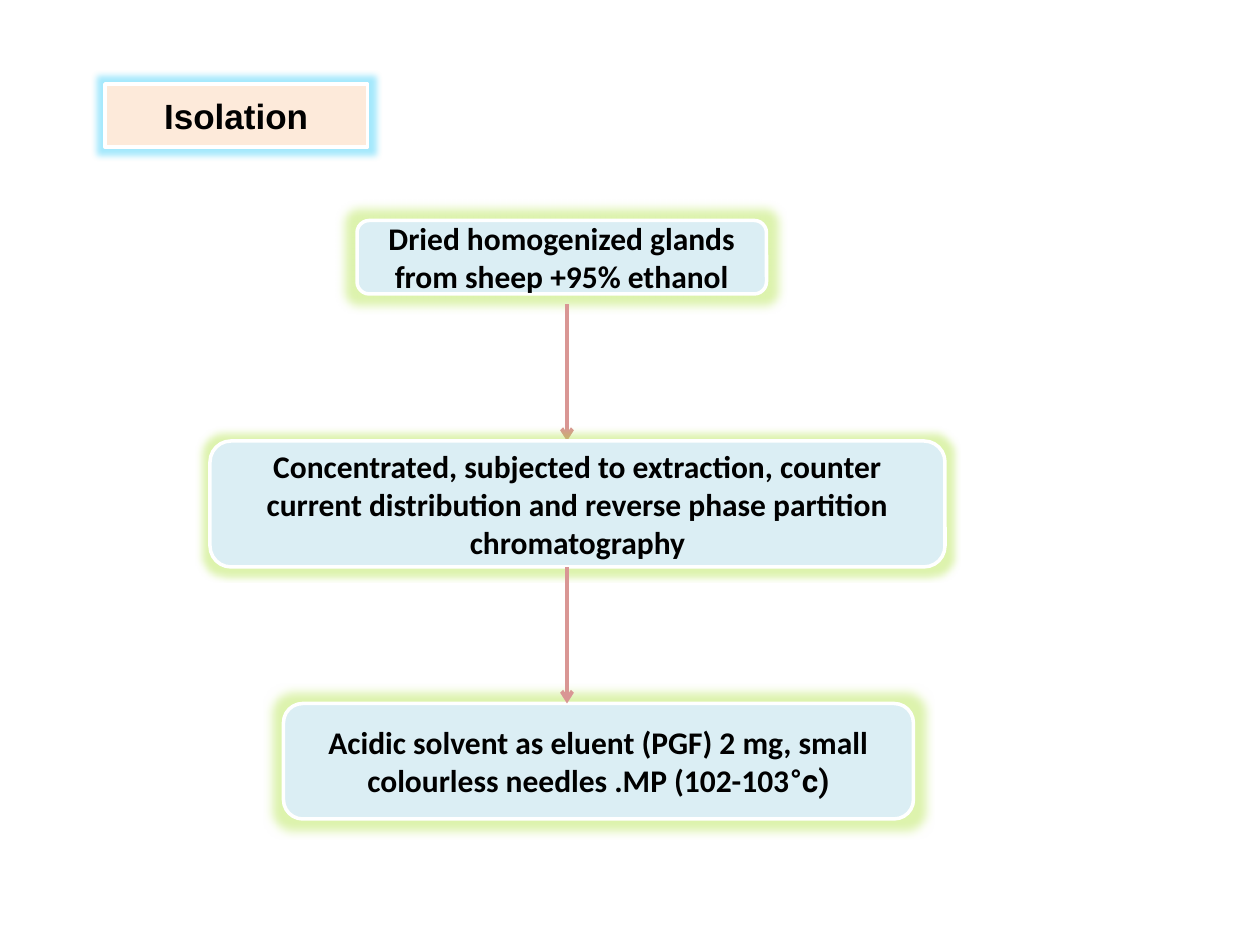
import dataclasses

import lxml.etree
import pptx
import pptx.dml.color
import pptx.enum.dml
import pptx.enum.shapes
import pptx.enum.text
import pptx.oxml
import pptx.oxml.ns
import pptx.util

RGBColor = pptx.dml.color.RGBColor
WHITE = RGBColor(0xFF, 0xFF, 0xFF)
BLACK = RGBColor(0x00, 0x00, 0x00)
PALE_BLUE = RGBColor(0xDB, 0xEE, 0xF4)
PALE_ORANGE = RGBColor(0xFD, 0xEA, 0xDA)
ROSE = RGBColor(0xD9, 0x96, 0x94)
GREEN_GLOW = RGBColor(0xAA, 0xE1, 0x34)
CYAN_GLOW = RGBColor(0x1E, 0xC8, 0xFA)

PX = 7620  # EMU, 120 px to the inch
ARROW_X = 540
GLOW_ALPHA = 40000  # thousandths of a percent


@dataclasses.dataclass(frozen=True)
class Panel:
    left: int
    top: int
    width: int
    height: int
    runs: tuple[tuple[str, str], ...]  # (text, font name)
    glow_pt: int
    glow: RGBColor = GREEN_GLOW
    fill: RGBColor = PALE_BLUE
    text_pt: int = 18


@dataclasses.dataclass(frozen=True)
class Arrow:
    top: int
    bottom: int


HEADING = Panel(100, 80, 250, 60, (("Isolation", "Arial"),), 8,
                CYAN_GLOW, PALE_ORANGE, 20)
FLOW = (
    Panel(340, 210, 390, 70,
          (("Dried homogenized glands from sheep +95% ethanol", "Calibri"),), 11),
    Arrow(290, 420),
    Panel(200, 420, 700, 120,
          (("Concentrated, subjected to extraction, counter current distribution "
            "and reverse phase partition chromatography", "Calibri"),), 8),
    Panel(270, 670, 600, 110,
          (("Acidic solvent as eluent (PGF) 2 mg, small colourless needles "
            ".MP (102-103", "Calibri"), ("°c)", "Roboto")), 11),
    Arrow(540, 670),
)


def set_all(target, values: dict) -> None:
    for name, value in values.items():
        setattr(target, name, value)


def add_part(parent, tag: str, **attributes: str):
    """Append a DrawingML child element and return it."""
    part = lxml.etree.SubElement(parent, pptx.oxml.ns.qn(tag))
    for name, value in attributes.items():
        part.set(name, value)
    return part


def add_glow(shape, radius_pt: int, color: RGBColor) -> None:
    properties = shape.element.spPr
    for effects in properties.findall(pptx.oxml.ns.qn("a:effectLst")):
        properties.remove(effects)
    effects = add_part(properties, "a:effectLst")
    glow = add_part(effects, "a:glow", rad=str(pptx.util.Pt(radius_pt)))
    glow_color = add_part(glow, "a:srgbClr", val=str(color))
    add_part(glow_color, "a:alpha", val=str(GLOW_ALPHA))


def format_panel(shape, panel: Panel) -> None:
    shape.fill.solid()
    shape.fill.fore_color.rgb = panel.fill
    shape.line.color.rgb = WHITE
    shape.line.width = pptx.util.Pt(2)
    add_glow(shape, panel.glow_pt, panel.glow)

    set_all(shape.text_frame, {
        "word_wrap": True,
        "auto_size": pptx.enum.text.MSO_AUTO_SIZE.NONE,
        "vertical_anchor": pptx.enum.text.MSO_ANCHOR.MIDDLE,
    })
    paragraph = shape.text_frame.paragraphs[0]
    paragraph.alignment = pptx.enum.text.PP_ALIGN.CENTER
    for text, font_name in panel.runs:
        run = paragraph.add_run()
        run.text = text
        set_all(run.font, {"name": font_name, "bold": True,
                           "size": pptx.util.Pt(panel.text_pt)})
        run.font.color.rgb = BLACK


def place_heading(title, panel: Panel) -> None:
    """Give the title placeholder the rounded outline of the other panels."""
    set_all(title, {name: getattr(panel, name) * PX
                    for name in ("left", "top", "width", "height")})
    outline = add_part(title.element.spPr, "a:prstGeom", prst="roundRect")
    add_part(outline, "a:avLst")
    format_panel(title, panel)


def add_panel(slide, panel: Panel) -> None:
    shape = slide.shapes.add_shape(
        pptx.enum.shapes.MSO_SHAPE.ROUNDED_RECTANGLE,
        panel.left * PX, panel.top * PX, panel.width * PX, panel.height * PX)
    format_panel(shape, panel)


def add_arrow(slide, arrow: Arrow) -> None:
    connector = slide.shapes.add_connector(
        pptx.enum.shapes.MSO_CONNECTOR.STRAIGHT,
        ARROW_X * PX, arrow.top * PX, ARROW_X * PX, arrow.bottom * PX)
    connector.line.color.rgb = ROSE
    connector.line.width = pptx.util.Pt(2.25)
    add_part(connector.line._get_or_add_ln(), "a:tailEnd", type="arrow")
    add_part(connector.element.spPr, "a:effectLst")


def main() -> None:
    deck = pptx.Presentation()
    set_all(deck, {"slide_width": 1200 * PX, "slide_height": 900 * PX})
    slide = deck.slides.add_slide(deck.slide_layouts.get_by_name("Title Only"))
    place_heading(slide.shapes.title, HEADING)
    for part in FLOW:
        if isinstance(part, Panel):
            add_panel(slide, part)
        else:
            add_arrow(slide, part)
    deck.save("out.pptx")


if __name__ == "__main__":
    main()
